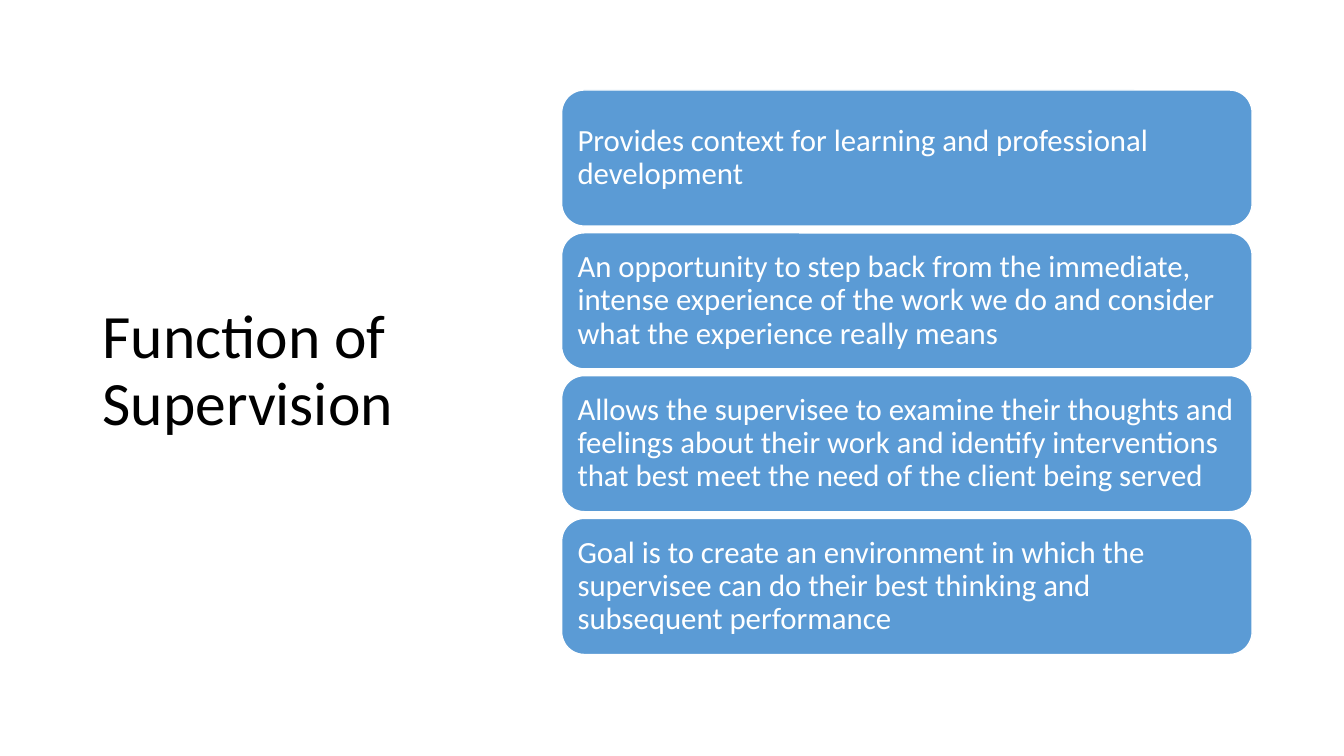
from pptx import Presentation
from pptx.dml.color import RGBColor
from pptx.enum.shapes import MSO_SHAPE
from pptx.enum.text import MSO_ANCHOR, PP_ALIGN
from pptx.util import Pt

FONT = "Calibri"
FUNCTIONS = [
    "Provides context for learning and professional development",
    "An opportunity to step back from the immediate, intense experience "
    "of the work we do and consider what the experience really means",
    "Allows the supervisee to examine their thoughts and feelings about their "
    "work and identify interventions that best meet the need of the client being served",
    "Goal is to create an environment in which the supervisee can do "
    "their best thinking and subsequent performance",
]
CARD_LEFT, CARD_TOP = 401.2, 64.3
CARD_WIDTH, CARD_HEIGHT = 493.2, 97.2
CARD_PITCH = 102


def color(value):
    return RGBColor.from_string(value)


def set_text(shape, text, size, text_color):
    tf = shape.text_frame
    tf.text = text
    tf.word_wrap = True
    tf.vertical_anchor = MSO_ANCHOR.MIDDLE
    p = tf.paragraphs[0]
    p.alignment = PP_ALIGN.LEFT
    p.line_spacing = 0.9
    r = p.runs[0]
    r.font.name = FONT
    r.font.size = Pt(size)
    r.font.color.rgb = color(text_color)


def add_title(s, text):
    title = s.shapes.title
    title.left, title.top = Pt(66), Pt(49)
    title.width, title.height = Pt(265.7), Pt(433.4)
    set_text(title, text, 44, "000000")


def add_card(s, top, text):
    card = s.shapes.add_shape(MSO_SHAPE.ROUNDED_RECTANGLE, Pt(CARD_LEFT), Pt(top),
                              Pt(CARD_WIDTH), Pt(CARD_HEIGHT))
    card.shadow.inherit = False
    card.fill.solid()
    card.fill.fore_color.rgb = color("5B9BD5")
    card.line.color.rgb = color("FFFFFF")
    card.line.width = Pt(1)
    tf = card.text_frame
    tf.margin_left = tf.margin_right = tf.margin_top = tf.margin_bottom = Pt(6.6)
    set_text(card, text, 22, "FFFFFF")


def main():
    prs = Presentation()
    prs.slide_width, prs.slide_height = Pt(960), Pt(540)
    s = prs.slides.add_slide(prs.slide_layouts[5])

    # Title on the left
    add_title(s, "Function of Supervision")

    # Stack of cards on the right
    for i, text in enumerate(FUNCTIONS):
        add_card(s, CARD_TOP + i * CARD_PITCH, text)

    prs.save("out.pptx")


if __name__ == "__main__":
    main()
